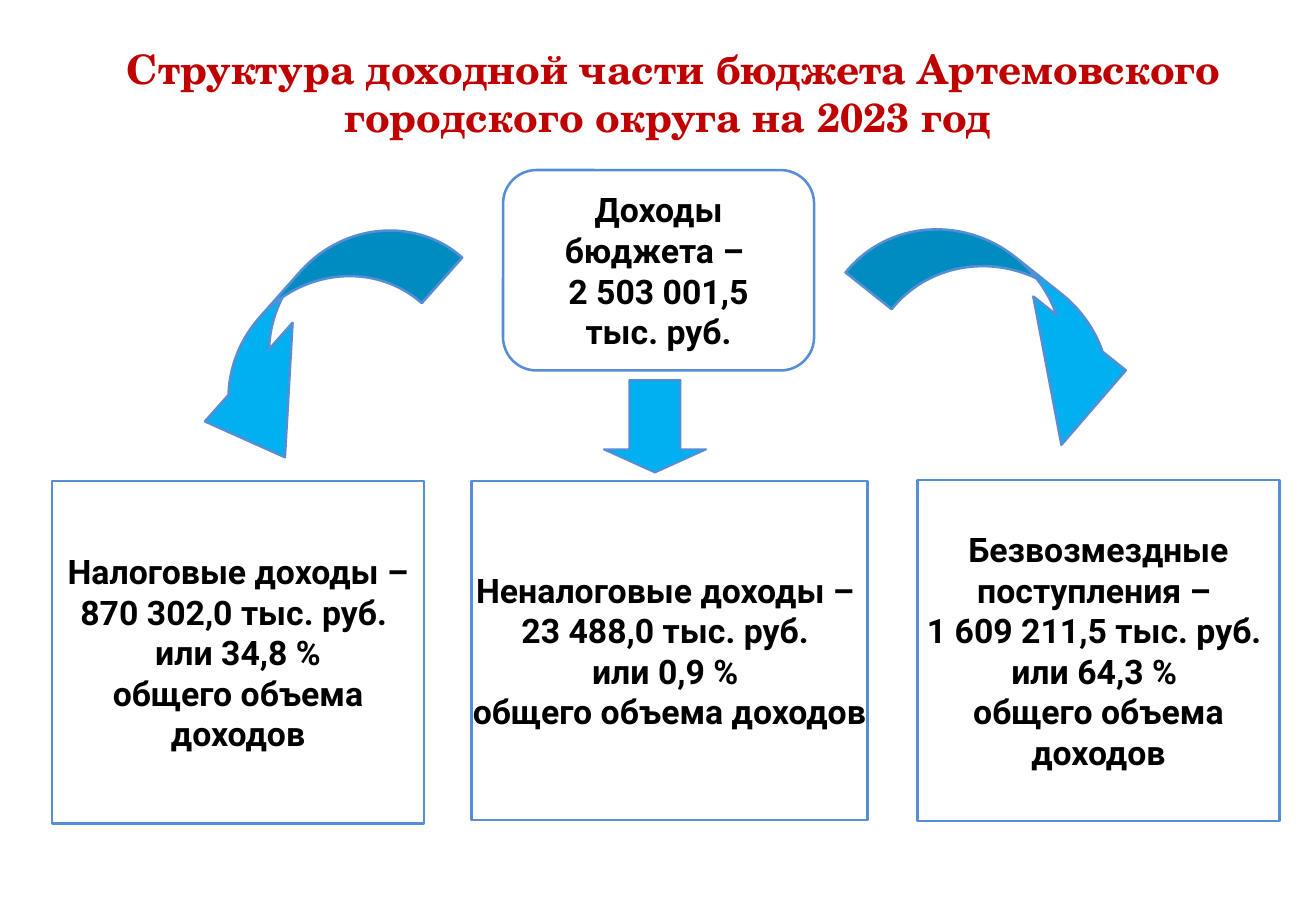
from pptx import Presentation
from pptx.dml.color import RGBColor
from pptx.enum.shapes import MSO_SHAPE
from pptx.enum.text import MSO_ANCHOR, PP_ALIGN
from pptx.util import Emu, Pt

RED = RGBColor(0xC0, 0x00, 0x00)
BLACK = RGBColor(0x00, 0x00, 0x00)
BLUE = RGBColor(0x55, 0x8E, 0xD5)
SKY = RGBColor(0x00, 0xB0, 0xF0)

EMU_PER_PX = 9144  # 100 px to the inch


class SlideBuilder:
    """Holds the style and the current slide."""

    title_style = {"name": "TeX Gyre Schola", "size": Pt(24), "bold": True}
    box_style = {"name": "Roboto", "size": Pt(20), "bold": True}

    def __init__(self, presentation):
        self.slide = presentation.slides.add_slide(presentation.slide_layouts[6])

    @staticmethod
    def lengths(values):
        return [Emu(value * EMU_PER_PX) for value in values]

    def fill_text(self, frame, lines, style, color, margins, anchor):
        left, top, right, bottom = self.lengths(margins)
        settings = {
            "word_wrap": True, "vertical_anchor": anchor,
            "margin_left": left, "margin_top": top,
            "margin_right": right, "margin_bottom": bottom,
        }
        for name, value in settings.items():
            setattr(frame, name, value)
        for index, line in enumerate(lines):
            paragraph = frame.add_paragraph() if index else frame.paragraphs[0]
            paragraph.alignment = PP_ALIGN.CENTER
            run = paragraph.add_run()
            run.text = line
            for name, value in style.items():
                setattr(run.font, name, value)
            run.font.color.rgb = color

    def shape(self, kind, place, line_width=1.5):
        shape = self.slide.shapes.add_shape(kind, *self.lengths(place))
        shape.shadow.inherit = False
        shape.line.color.rgb = BLUE
        shape.line.width = Pt(line_width)
        return shape

    def box(self, kind, place, lines, margins=(0, 0, 0, 0)):
        shape = self.shape(kind, place)
        shape.fill.background()
        self.fill_text(shape.text_frame, lines, self.box_style, BLACK, margins,
                       MSO_ANCHOR.MIDDLE)

    def arrow(self, kind, place, adjustments, rotation=0, line_width=1.5):
        shape = self.shape(kind, place, line_width)
        shape.fill.solid()
        shape.fill.fore_color.rgb = SKY
        shape.rotation = rotation
        for index, value in enumerate(adjustments):
            shape.adjustments[index] = value

    def title(self, place, text):
        text_box = self.slide.shapes.add_textbox(*self.lengths(place))
        self.fill_text(text_box.text_frame, [text], self.title_style, RED,
                       (10, 5, 10, 5), MSO_ANCHOR.TOP)


def main():
    presentation = Presentation()
    presentation.slide_width, presentation.slide_height = SlideBuilder.lengths((1083, 750))
    builder = SlideBuilder(presentation)

    # Total income
    builder.box(MSO_SHAPE.ROUNDED_RECTANGLE, (414, 140, 256, 165),
                ["Доходы бюджета – ", "2 503 001,5", "тыс. руб."], (14, 5, 14, 5))

    # Income sources
    share = "общего объема доходов"
    sources = [
        ((43, 396, 306, 282),
         ["Налоговые доходы – 870 302,0 тыс. руб. ", "или 34,8 %"], (12, 0, 12, 0)),
        ((388, 396, 326, 279),
         ["Неналоговые доходы – ", "23 488,0 тыс. руб. ", "или 0,9 % "], (0, 0, 0, 0)),
        ((755, 395, 298, 281),
         ["Безвозмездные поступления – ", "1 609 211,5 тыс. руб. ", "или 64,3 % "],
         (0, 0, 0, 0)),
    ]
    for place, lines, margins in sources:
        builder.box(MSO_SHAPE.RECTANGLE, place, lines + [share], margins)

    # Arrows from the total to its sources
    builder.arrow(MSO_SHAPE.CURVED_UP_ARROW, (118, 238, 274, 92),
                  (0.545, 1.179, 0.747), rotation=131.6)
    builder.arrow(MSO_SHAPE.DOWN_ARROW, (497, 313, 84, 76), (0.5, 0.25), line_width=1.25)
    builder.arrow(MSO_SHAPE.CURVED_DOWN_ARROW, (696, 224, 276, 97),
                  (0.5, 1.003, 0.834), rotation=38.6)

    # Title
    builder.title((65, 31, 979, 91),
                  "Структура доходной части бюджета Артемовского городского округа на 2023 год ")

    presentation.save("out.pptx")


if __name__ == "__main__":
    main()
